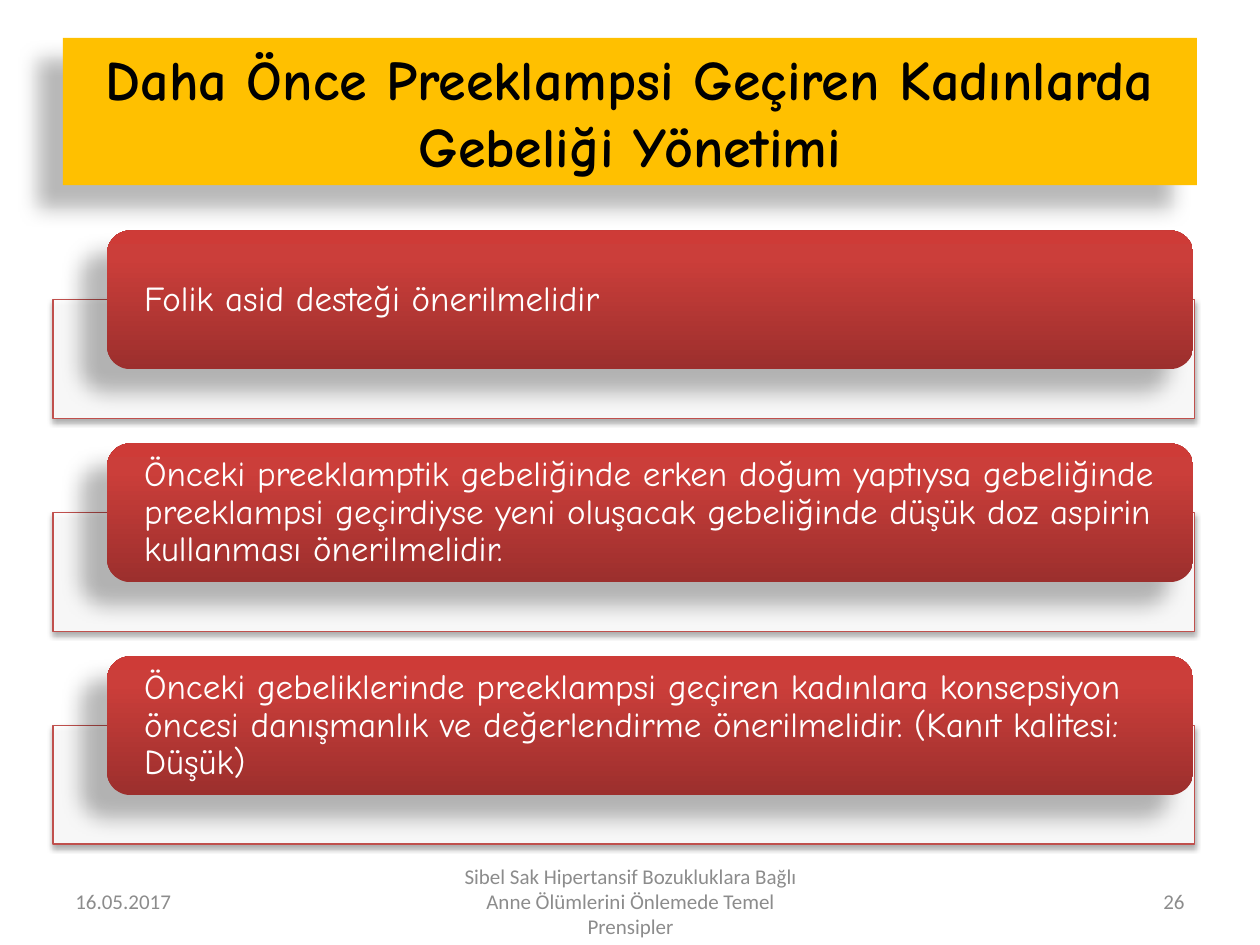
from lxml import etree
from pptx import Presentation
from pptx import util as u
from pptx.dml.color import RGBColor
from pptx.enum import shapes, text
from pptx.oxml import parse_xml
from pptx.oxml.ns import nsdecls, qn

# Content
TITLE = "Daha Önce Preeklampsi Geçiren Kadınlarda Gebeliği Yönetimi"
ADVICE = [
    "Folik asid desteği önerilmelidir",
    "Önceki preeklamptik gebeliğinde erken doğum yaptıysa gebeliğinde preeklampsi "
    "geçirdiyse yeni oluşacak gebeliğinde düşük doz aspirin kullanması önerilmelidir.",
    "Önceki gebeliklerinde preeklampsi geçiren kadınlara konsepsiyon öncesi danışmanlık "
    "ve değerlendirme önerilmelidir. (Kanıt kalitesi: Düşük)",
]
FOOTER = [  # text, left, width, alignment
    ("16.05.2017", 0.5, 2.33, text.PP_ALIGN.LEFT),
    ("Sibel Sak Hipertansif Bozukluklara Bağlı Anne Ölümlerini Önlemede Temel Prensipler",
     3.42, 3.17, text.PP_ALIGN.CENTER),
    ("26", 7.17, 2.33, text.PP_ALIGN.RIGHT),
]

# Theme: type as (font, size, colour, bold); shadows as (alpha %, blur pt, distance pt, angle)
THEME = {
    "title": ("Comic Neue", 32, "000000", True),
    "advice": ("Comic Neue", 20, "FFFFFF", False),
    "footer": ("Calibri", 12, "8C8C8C", False),
    "banner": "FFC000",
    "panel": "FFFFFF",
    "panel_line": "C0504D",
    "bar": [(0, "9C2F2D"), (80, "CB3E3A"), (100, "CE3B37")],
    "deep_shadow": (28, 11.8, 19.7, 141),
    "soft_shadow": (35, 3.1, 1.8, 90),
}
PANEL_TOP, PITCH, BAR_RISE = 2.38, 1.69, 0.55


def write(sp, content, style, align, inset=None):
    tf = sp.text_frame
    tf.word_wrap = True
    tf.vertical_anchor = text.MSO_ANCHOR.MIDDLE
    if inset is not None:
        margins = {"margin_left": inset, "margin_right": inset, "margin_top": 0, "margin_bottom": 0}
        for name, value in margins.items():
            setattr(tf, name, u.Inches(value))
    p = tf.paragraphs[0]
    p.alignment = align
    r = p.add_run()
    r.text = content
    font, size, colour, bold = THEME[style]
    for name, value in {"name": font, "size": u.Pt(size), "bold": bold}.items():
        setattr(r.font, name, value)
    r.font.color.rgb = RGBColor.from_string(colour)
    return p


def add_box(s, kind, box, shadow, fill=None, line=None):
    sp = s.shapes.add_shape(kind, *map(u.Inches, box))
    if fill:
        sp.fill.solid()
        sp.fill.fore_color.rgb = RGBColor.from_string(fill)
    if line:
        sp.line.color.rgb = RGBColor.from_string(line)
        sp.line.width = u.Pt(0.75)
    else:
        sp.line.fill.background()
    alpha, blur, dist, angle = THEME[shadow]
    sp._element.spPr.append(parse_xml(
        f'<a:effectLst {nsdecls("a")}><a:outerShdw blurRad="{u.Pt(blur)}" dist="{u.Pt(dist)}" '
        f'dir="{angle * 60000}" algn="ctr" rotWithShape="0"><a:srgbClr val="000000">'
        f'<a:alpha val="{alpha * 1000}"/></a:srgbClr></a:outerShdw></a:effectLst>'))
    return sp


def set_gradient(sp, stops, angle):
    gs = "".join(f'<a:gs pos="{pos * 1000}"><a:srgbClr val="{c}"/></a:gs>' for pos, c in stops)
    grad = parse_xml(f'<a:gradFill {nsdecls("a")} rotWithShape="1"><a:gsLst>{gs}</a:gsLst>'
                     f'<a:lin ang="{angle * 60000}" scaled="0"/></a:gradFill>')
    sp._element.spPr.find(qn("a:prstGeom")).addnext(grad)


def main():
    prs = Presentation()
    prs.slide_width, prs.slide_height = u.Inches(10), u.Inches(7.5)
    s = prs.slides.add_slide(prs.slide_layouts[6])

    # Footer
    for content, left, width, align in FOOTER:
        sp = s.shapes.add_textbox(*map(u.Inches, (left, 6.95, width, 0.4)))
        write(sp, content, "footer", align)

    # Title banner
    sp = add_box(s, shapes.MSO_SHAPE.RECTANGLE, (0.5, 0.3, 9, 1.17), "deep_shadow", THEME["banner"])
    write(sp, TITLE, "title", text.PP_ALIGN.CENTER)

    # Advice: a pale panel with a red bar over it
    for i, content in enumerate(ADVICE):
        top = PANEL_TOP + i * PITCH
        panel = add_box(s, shapes.MSO_SHAPE.RECTANGLE, (0.42, top, 9.06, 0.94), "soft_shadow",
                        THEME["panel"], THEME["panel_line"])
        colour = panel._element.spPr.find(qn("a:solidFill"))[0]
        etree.SubElement(colour, qn("a:alpha"), val="90000")

        bar = add_box(s, shapes.MSO_SHAPE.ROUNDED_RECTANGLE, (0.85, top - BAR_RISE, 8.62, 1.1),
                      "deep_shadow")
        set_gradient(bar, THEME["bar"], 270)
        p = write(bar, content, "advice", text.PP_ALIGN.LEFT, inset=0.24)
        p.line_spacing = 0.9

    prs.save("out.pptx")


if __name__ == "__main__":
    main()
